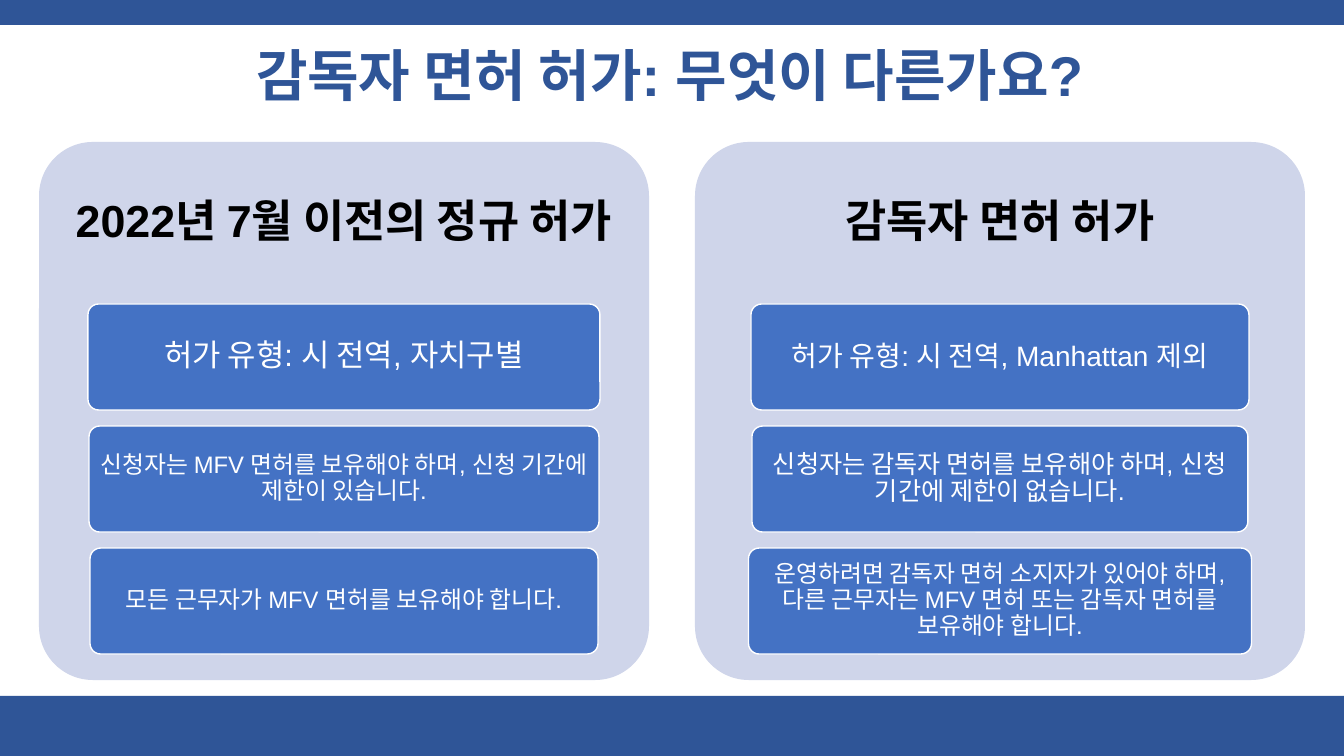
from pptx import Presentation
from pptx.dml.color import RGBColor
from pptx.enum.shapes import MSO_SHAPE as Shape
from pptx.enum.text import MSO_ANCHOR as Anchor, MSO_AUTO_SIZE as AutoSize, PP_ALIGN as Align
from pptx.util import Emu, Pt

PAGE_WIDTH, PAGE_HEIGHT = 1344, 756
EMU_PER_PX = 12192000 / PAGE_WIDTH

NAVY = RGBColor(0x2F, 0x55, 0x97)
BLUE = RGBColor(0x44, 0x72, 0xC4)
PALE = RGBColor(0xCF, 0xD5, 0xEA)
WHITE = RGBColor(0xFF, 0xFF, 0xFF)
BLACK = RGBColor(0x00, 0x00, 0x00)

PANEL_TOP, PANEL_WIDTH, PANEL_HEIGHT = 142, 610, 538
HEADING_HEIGHT = 161
CARD_TOP, CARD_HEIGHT, CARD_PITCH = 304, 106, 122

# Panel left edge, heading, then (card width, text size, text) from top to bottom
PANELS = [
    (39, "2022년 7월 이전의 정규 허가", [
        (512, 22, "허가 유형: 시 전역, 자치구별"),
        (510, 17, "신청자는 MFV 면허를 보유해야 하며, 신청 기간에 제한이 있습니다."),
        (508, 17, "모든 근무자가 MFV 면허를 보유해야 합니다."),
    ]),
    (695, "감독자 면허 허가", [
        (498, 20, "허가 유형: 시 전역, Manhattan 제외"),
        (496, 18, "신청자는 감독자 면허를 보유해야 하며, 신청 기간에 제한이 없습니다."),
        (503, 17, "운영하려면 감독자 면허 소지자가 있어야 하며, "
                  "다른 근무자는 MFV 면허 또는 감독자 면허를 보유해야 합니다."),
    ]),
]


def px(length):
    return Emu(round(length * EMU_PER_PX))


def frame(left, top, width, height):
    return px(left), px(top), px(width), px(height)


def write(box, text, size, color, bold=False, inset=(10, 5)):
    """Fill a box with one centred paragraph; inset is (sides, top and bottom)."""
    body = box.text_frame
    body.text = text
    body.word_wrap = True
    body.auto_size = AutoSize.NONE
    body.vertical_anchor = Anchor.MIDDLE
    body.margin_left = body.margin_right = px(inset[0])
    body.margin_top = body.margin_bottom = px(inset[1])
    para = body.paragraphs[0]
    para.alignment = Align.CENTER
    para.line_spacing = 0.9
    para.font.name = "Arial"
    para.font.size = Pt(size)
    para.font.bold = bold
    para.font.color.rgb = color


def add_block(page, kind, place, fill, outline=None):
    block = page.shapes.add_shape(kind, *frame(*place))
    block.shadow.inherit = False
    block.fill.solid()
    block.fill.fore_color.rgb = fill
    if outline is None:
        block.line.fill.background()
    else:
        block.line.color.rgb = outline
        block.line.width = Pt(1)
    if kind == Shape.ROUNDED_RECTANGLE:
        block.adjustments[0] = 0.1
    return block


def add_title(page, text):
    title = page.shapes.title
    title.left, title.top, title.width, title.height = frame(-13, 40, 1365, 76)
    write(title, text, 40, NAVY, bold=True)


def add_panel(page, left, heading, cards):
    add_block(page, Shape.ROUNDED_RECTANGLE,
              (left, PANEL_TOP, PANEL_WIDTH, PANEL_HEIGHT), PALE)
    heading_box = page.shapes.add_textbox(
        *frame(left, PANEL_TOP, PANEL_WIDTH, HEADING_HEIGHT))
    write(heading_box, heading, 32, BLACK, bold=True, inset=(13, 13))
    for row, (width, size, text) in enumerate(cards):
        place = (left + (PANEL_WIDTH - width) / 2, CARD_TOP + row * CARD_PITCH,
                 width, CARD_HEIGHT)
        card = add_block(page, Shape.ROUNDED_RECTANGLE, place, BLUE, WHITE)
        write(card, text, size, WHITE, inset=(5, 4))


def main():
    deck = Presentation()
    deck.slide_width, deck.slide_height = px(PAGE_WIDTH), px(PAGE_HEIGHT)
    page = deck.slides.add_slide(deck.slide_layouts.get_by_name("Title Only"))
    for top, height in ((0, 25), (696, 60)):
        add_block(page, Shape.RECTANGLE, (0, top, PAGE_WIDTH, height), NAVY)
    add_title(page, "감독자 면허 허가: 무엇이 다른가요?")
    for panel in PANELS:
        add_panel(page, *panel)
    deck.save("out.pptx")


if __name__ == "__main__":
    main()
